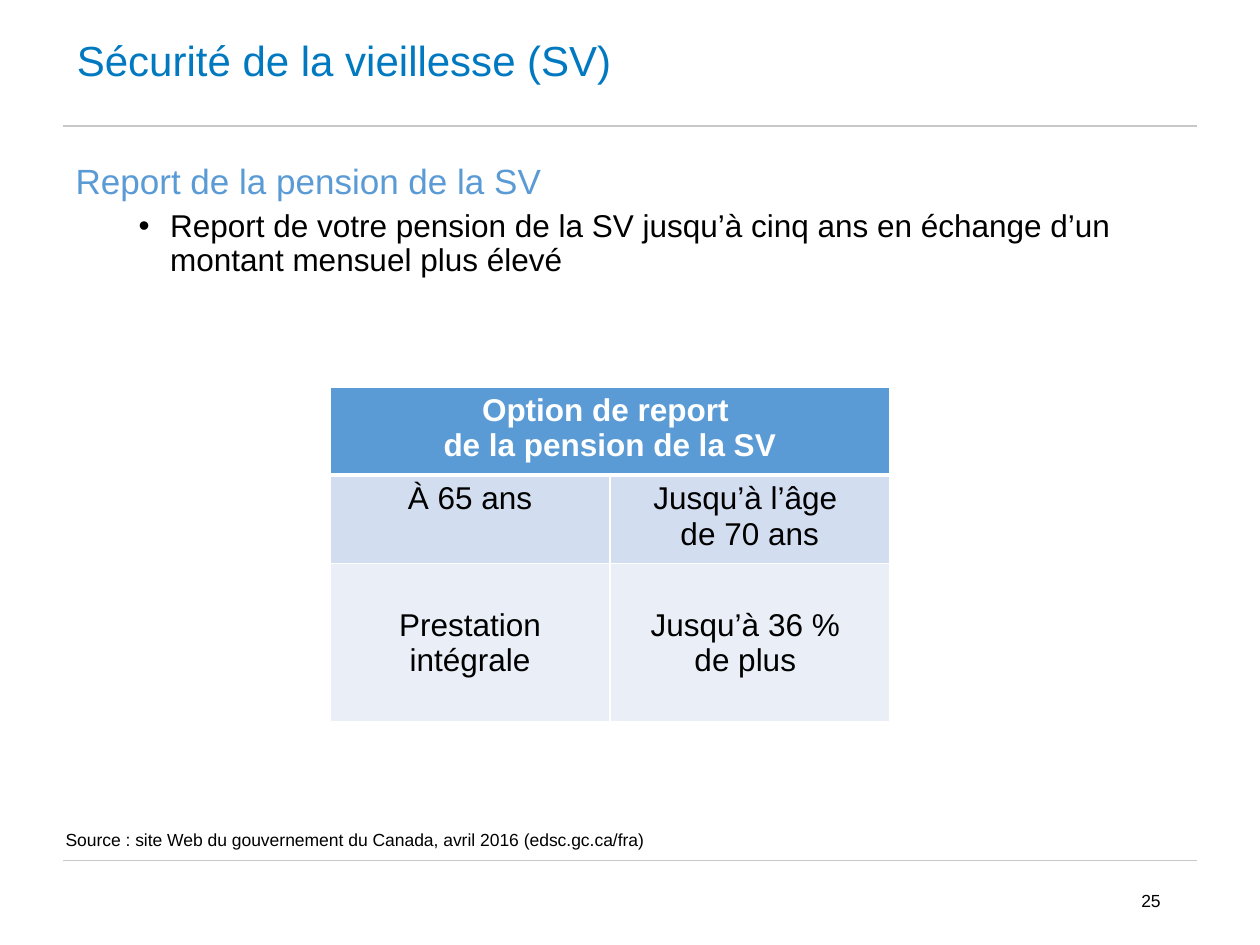
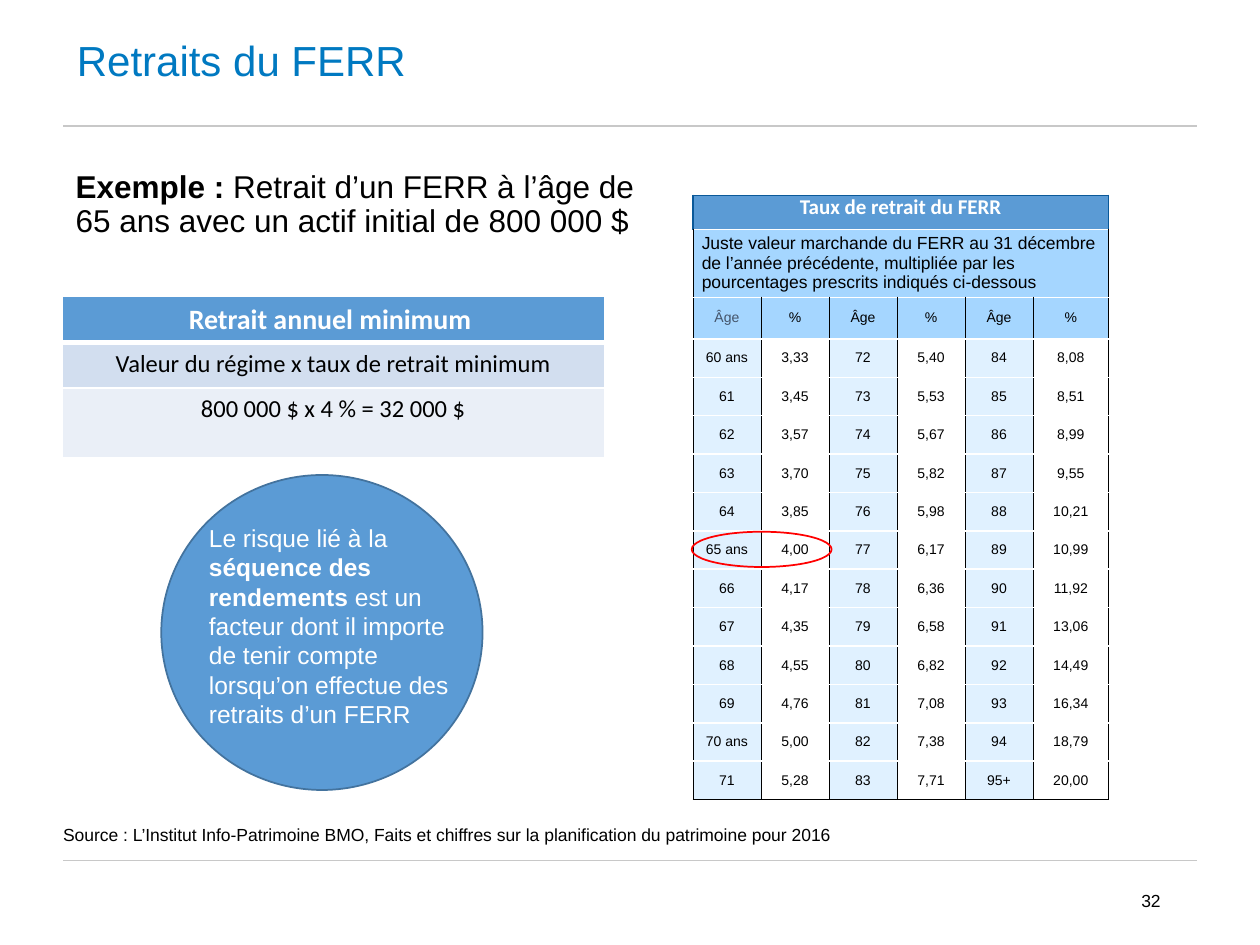
from dataclasses import dataclass, replace
from typing import NamedTuple

from lxml import etree
from pptx import Presentation
from pptx.dml.color import RGBColor
from pptx.enum import shapes, text
from pptx.oxml import ns
from pptx.util import Emu, Inches, Pt

WIDTH, HEIGHT = Inches(10), Inches(7.5)
COL, ROW = WIDTH // 20, HEIGHT // 15


@dataclass(frozen=True)
class Style:
    size: float
    color: str
    bold: bool = False
    font: str = "Arial"
    align: text.PP_ALIGN = text.PP_ALIGN.LEFT
    line: float | Pt = 1.0
    before: float = 0


class Theme:
    """Colours and type styles of the deck."""
    BLACK, WHITE, RED = "000000", "FFFFFF", "FF0000"
    RULE, BLUE, EDGE = "C8C8C8", "5B9BD5", "43739E"
    BAND, PALE = "D2DEEF", "EAEFF7"
    SKY, ICE, NAVY, SLATE = "A5D6FF", "E0F1FF", "0B5999", "44546A"

    TITLE = Style(24, "0079C1", line=0.9)
    HEAD = Style(20, BLUE, line=0.9)
    BODY = Style(18, BLACK, line=0.9)
    ITEM = replace(BODY, before=5)
    NOTE = Style(10, BLACK)
    PAGE = replace(NOTE, align=text.PP_ALIGN.RIGHT)
    CIRCLE = Style(14, WHITE)
    CELL = Style(18, BLACK, align=text.PP_ALIGN.CENTER)
    TOP = replace(CELL, color=WHITE, bold=True)
    SUM = replace(CELL, size=14, font="Calibri")
    SUM_TOP = replace(TOP, size=16, font="Calibri")
    RATE = replace(CELL, size=8, line=Pt(9))
    RATE_TOP = replace(TOP, size=12, font="Calibri", line=Pt(9))


class Box(NamedTuple):
    """A place on the slide, in grid columns and rows."""
    x: float
    y: float
    w: float
    h: float

    def emu(self) -> tuple[Emu, ...]:
        return tuple(Emu(round(n * unit)) for n, unit in zip(self, (COL, ROW, COL, ROW)))


class Run(NamedTuple):
    words: str
    bold: bool = False


class Cell(NamedTuple):
    words: str
    style: Style
    fill: str
    span: int = 1


class Edge(NamedTuple):
    color: str
    width: float


@dataclass(frozen=True)
class Grid:
    """A table: its place, column and row sizes, cells and borders."""
    x: float
    y: float
    cols: list[float]
    rows: list[float]
    cells: list[list[Cell]]
    edge: Edge
    top: Edge
    under: Edge
    pad: tuple[float, float] = (0.1, 0.05)
    anchor: text.MSO_ANCHOR = text.MSO_ANCHOR.TOP


def rgb(color: str) -> RGBColor:
    return RGBColor.from_string(color)


def write(par, words: str | list[Run], style: Style) -> None:
    par.alignment = style.align
    par.line_spacing = style.line
    par.space_before = Pt(style.before)
    font = par.font
    font.size, font.name, font.bold = Pt(style.size), style.font, style.bold
    font.color.rgb = rgb(style.color)
    if isinstance(words, str):
        for i, line in enumerate(words.split("\n")):
            if i:
                par.add_line_break()
            par.add_run().text = line
        return
    for part in words:
        run = par.add_run()
        run.text = part.words
        run.font.bold = part.bold


def mark(par, bullet: str = "") -> None:
    """Give a list paragraph a hanging bullet, or none."""
    props = par._p.get_or_add_pPr()
    left, hang = (Inches(0.75), -Inches(0.25)) if bullet else (0, 0)
    props.set("marL", str(left))
    props.set("indent", str(hang))
    if bullet:
        etree.SubElement(props, ns.qn("a:buFont"), typeface="Arial")
        etree.SubElement(props, ns.qn("a:buChar"), char=bullet)
    else:
        etree.SubElement(props, ns.qn("a:buNone"))


def place(shape, box: Box) -> None:
    shape.left, shape.top, shape.width, shape.height = box.emu()


def label(slide, box: Box, words: str | list[Run], style: Style,
          anchor=text.MSO_ANCHOR.TOP, flush: bool = False) -> None:
    frame = slide.shapes.add_textbox(*box.emu()).text_frame
    frame.word_wrap = True
    frame.vertical_anchor = anchor
    if flush:
        frame.margin_left = frame.margin_right = 0
        frame.margin_top = frame.margin_bottom = 0
    write(frame.paragraphs[0], words, style)


def rule(slide, y: float) -> None:
    x, top, wide, _ = Box(1, y, 18, 0).emu()
    line = slide.shapes.add_connector(shapes.MSO_CONNECTOR.STRAIGHT, x, top, x + wide, top)
    line.line.color.rgb = rgb(Theme.RULE)
    line.line.width = Pt(0.75)
    etree.SubElement(line._element.spPr, ns.qn("a:effectLst"))


def oval(slide, box: Box, edge: str, fill: str | None = None) -> None:
    shape = slide.shapes.add_shape(shapes.MSO_SHAPE.OVAL, *box.emu())
    shape.shadow.inherit = False
    shape.line.color.rgb = rgb(edge)
    shape.line.width = Pt(1)
    if fill:
        shape.fill.solid()
        shape.fill.fore_color.rgb = rgb(fill)
    else:
        shape.fill.background()


def border(cell, side: str, edge: Edge) -> None:
    props = cell._tc.get_or_add_tcPr()
    line = etree.SubElement(props, ns.qn(f"a:ln{side}"), w=str(Pt(edge.width)))
    fill = etree.SubElement(line, ns.qn("a:solidFill"))
    etree.SubElement(fill, ns.qn("a:srgbClr"), val=edge.color)


def table(slide, grid: Grid) -> None:
    box = Box(grid.x, grid.y, sum(grid.cols), sum(grid.rows))
    tab = slide.shapes.add_table(len(grid.rows), len(grid.cols), *box.emu()).table
    tab.first_row = tab.horz_banding = False
    for col, wide in zip(tab.columns, grid.cols):
        col.width = Emu(round(wide * COL))
    for row, high in zip(tab.rows, grid.rows):
        row.height = Emu(round(high * ROW))
    for r, line in enumerate(grid.cells):
        outer = grid.edge if r else grid.top
        for c in range(len(grid.cols)):
            for side in ("L", "R") if r else ("L", "R", "T"):
                border(tab.cell(r, c), side, outer)
            border(tab.cell(r, c), "B", grid.edge if r else grid.under)
        for c, item in enumerate(line):
            cell = tab.cell(r, c)
            if item.span > 1:
                cell.merge(tab.cell(r, c + item.span - 1))
            cell.fill.solid()
            cell.fill.fore_color.rgb = rgb(item.fill)
            cell.margin_left = cell.margin_right = Inches(grid.pad[0])
            cell.margin_top = cell.margin_bottom = Inches(grid.pad[1])
            last = r == len(grid.rows) - 1
            cell.vertical_anchor = text.MSO_ANCHOR.MIDDLE if last and r < 3 and len(line) > 1 else grid.anchor
            write(cell.text_frame.paragraphs[0], item.words, item.style)


def start(deck, title: str, page: int, note: str, spot: Box, body: Box):
    """Add a slide with title, rules, page number and source; return it and its body frame."""
    slide = deck.slides.add_slide(deck.slide_layouts[1])
    head, main = slide.shapes.title, slide.placeholders[1]
    place(head, Box(1.02, 0, 18, 2))
    place(main, body)
    for shape in (head, main):
        shape.text_frame.auto_size = text.MSO_AUTO_SIZE.NONE
    head.text_frame.vertical_anchor = text.MSO_ANCHOR.MIDDLE
    write(head.text_frame.paragraphs[0], title, Theme.TITLE)
    for y in (2, 13.66):
        rule(slide, y)
    label(slide, Box(14.12, 13.9, 4.5, 0.8), str(page), Theme.PAGE, text.MSO_ANCHOR.MIDDLE)
    label(slide, spot, note, Theme.NOTE, text.MSO_ANCHOR.BOTTOM, flush=True)
    return slide, main.text_frame


WHITE_EDGES = dict(edge=Edge(Theme.WHITE, 1), top=Edge(Theme.WHITE, 1), under=Edge(Theme.WHITE, 3))


def pension(deck) -> None:
    slide, frame = start(
        deck, "Sécurité de la vieillesse (SV)", 25,
        "Source : site Web du gouvernement du Canada, avril 2016 (edsc.gc.ca/fra)",
        Box(1.04, 12.76, 17.98, 0.74), Box(1, 2.5, 18, 3.32))
    head = frame.paragraphs[0]
    mark(head)
    write(head, "Report de la pension de la SV", Theme.HEAD)
    item = frame.add_paragraph()
    item.level = 1
    mark(item, "•")
    write(item, "Report de votre pension de la SV jusqu’à cinq ans en échange d’un "
                "montant mensuel plus élevé", Theme.ITEM)
    table(slide, Grid(5.24, 6.14, [4.44] * 2, [1.3, 1.3, 2.52], [
        [Cell("Option de report \nde la pension de la SV", Theme.TOP, Theme.BLUE, 2)],
        [Cell(words, Theme.CELL, Theme.BAND) for words in ("À 65 ans", "Jusqu’à l’âge \nde 70 ans")],
        [Cell(words, Theme.CELL, Theme.PALE)
         for words in ("Prestation intégrale", "Jusqu’à 36 % \nde plus ")],
    ], **WHITE_EDGES))


RATES = ("3,33 3,45 3,57 3,70 3,85 4,00 4,17 4,35 4,55 4,76 5,00 5,28 "
         "5,40 5,53 5,67 5,82 5,98 6,17 6,36 6,58 6,82 7,08 7,38 7,71 "
         "8,08 8,51 8,99 9,55 10,21 10,99 11,92 13,06 14,49 16,34 18,79 20,00").split()
FIRST, DEPTH = 60, 12
AGES = {60: "60 ans", 65: "65 ans", 70: "70 ans", 95: "95+"}


def rates() -> list[list[Cell]]:
    """Heading rows, then ages and rates running down three pairs of columns."""
    names = [Cell(name, Theme.RATE, Theme.SKY) for name in ("Âge", "%") * 3]
    names[0] = names[0]._replace(style=replace(Theme.RATE, color=Theme.SLATE))
    lines = [
        [Cell("Taux de retrait du FERR", Theme.RATE_TOP, Theme.BLUE, 6)],
        [Cell("Juste valeur marchande du FERR au 31 décembre de l’année précédente, "
              "multipliée par les pourcentages prescrits indiqués ci-dessous",
              Theme.NOTE, Theme.SKY, 6)],
        names,
    ]
    for r in range(DEPTH):
        line = []
        for i in range(r, len(RATES), DEPTH):
            age = FIRST + i
            line += [Cell(AGES.get(age, str(age)), Theme.RATE, Theme.ICE),
                     Cell(RATES[i], Theme.RATE, Theme.WHITE)]
        lines.append(line)
    return lines


def ferr(deck) -> None:
    slide, frame = start(
        deck, "Retraits du FERR", 32,
        "Source : L’Institut Info-Patrimoine BMO, Faits et chiffres sur la "
        "planification du patrimoine pour 2016",
        Box(1, 12.68, 17.98, 0.74), Box(1, 2.62, 9.9, 1.28))
    lead = frame.paragraphs[0]
    mark(lead)
    write(lead, [Run("Exemple : ", True),
                 Run("Retrait d’un FERR à l’âge de 65 ans avec un actif initial de 800 000 $")],
          Theme.BODY)
    table(slide, Grid(0.98, 4.7, [8.62], [0.74, 0.72, 1.1], [
        [Cell("Retrait annuel minimum ", Theme.SUM_TOP, Theme.BLUE)],
        [Cell("Valeur du régime x taux de retrait minimum", Theme.SUM, Theme.BAND)],
        [Cell("800 000 $ x 4 % = 32 000 $", Theme.SUM, Theme.PALE)],
    ], **WHITE_EDGES))
    thin = Edge(Theme.BLACK, 0.5)
    table(slide, Grid(11, 3.1, [1.08] * 5 + [1.2], [0.54, 1.08, 0.66] + [0.61] * DEPTH, rates(),
                      edge=thin, top=Edge(Theme.NAVY, 1), under=thin,
                      pad=(0.07, 0), anchor=text.MSO_ANCHOR.MIDDLE))
    oval(slide, Box(10.98, 8.44, 2.22, 0.56), Theme.RED)
    oval(slide, Box(2.56, 7.54, 5.1, 5), Theme.EDGE, Theme.BLUE)
    label(slide, Box(3.12, 8.2, 4.54, 3.68), [
        Run("Le risque lié à la "), Run("séquence des rendements", True),
        Run(" est un facteur dont il importe de tenir compte lorsqu’on effectue "
            "des retraits d’un FERR")], Theme.CIRCLE)


def main() -> None:
    deck = Presentation()
    deck.slide_width, deck.slide_height = WIDTH, HEIGHT
    pension(deck)
    ferr(deck)
    deck.save("out.pptx")


if __name__ == "__main__":
    main()
